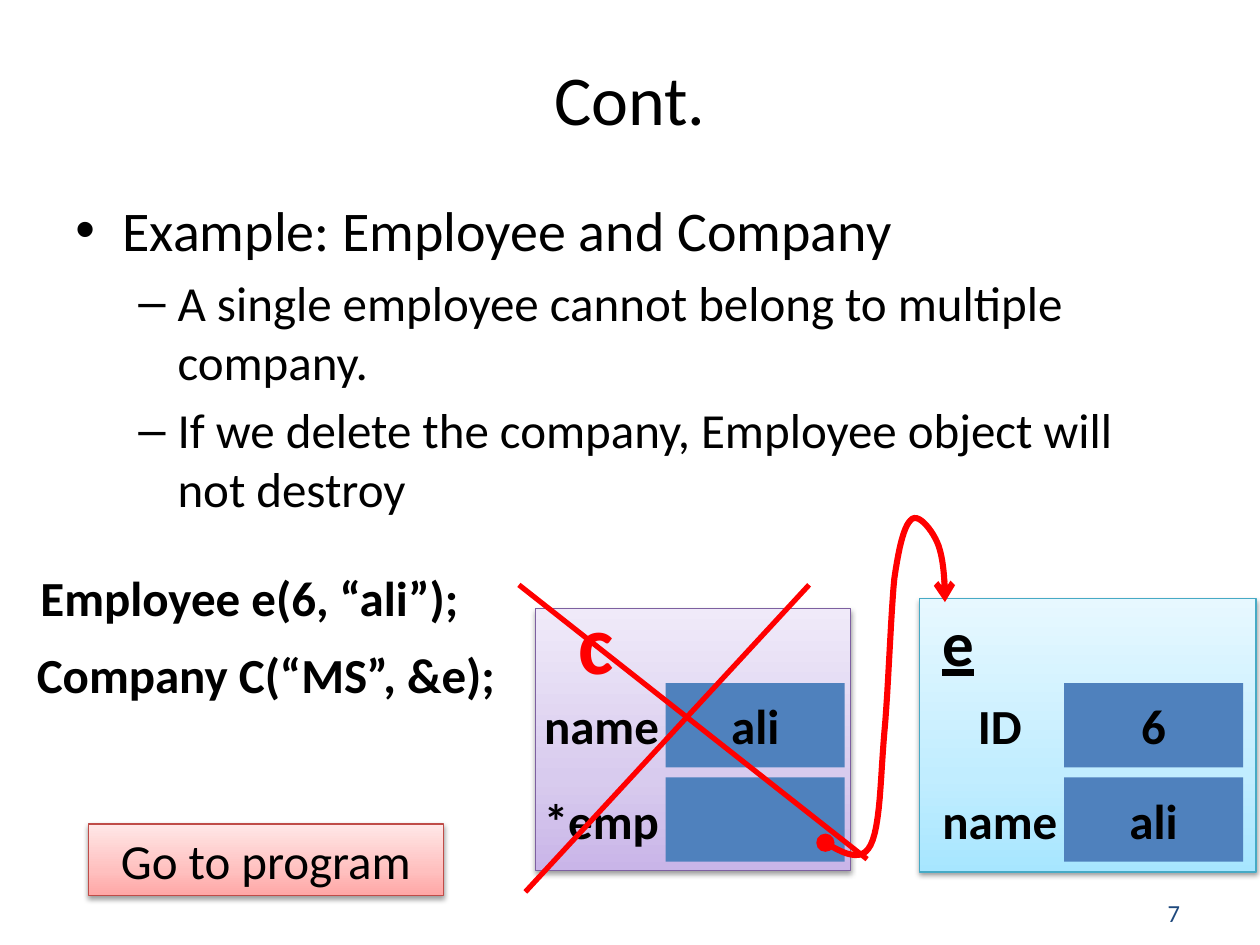
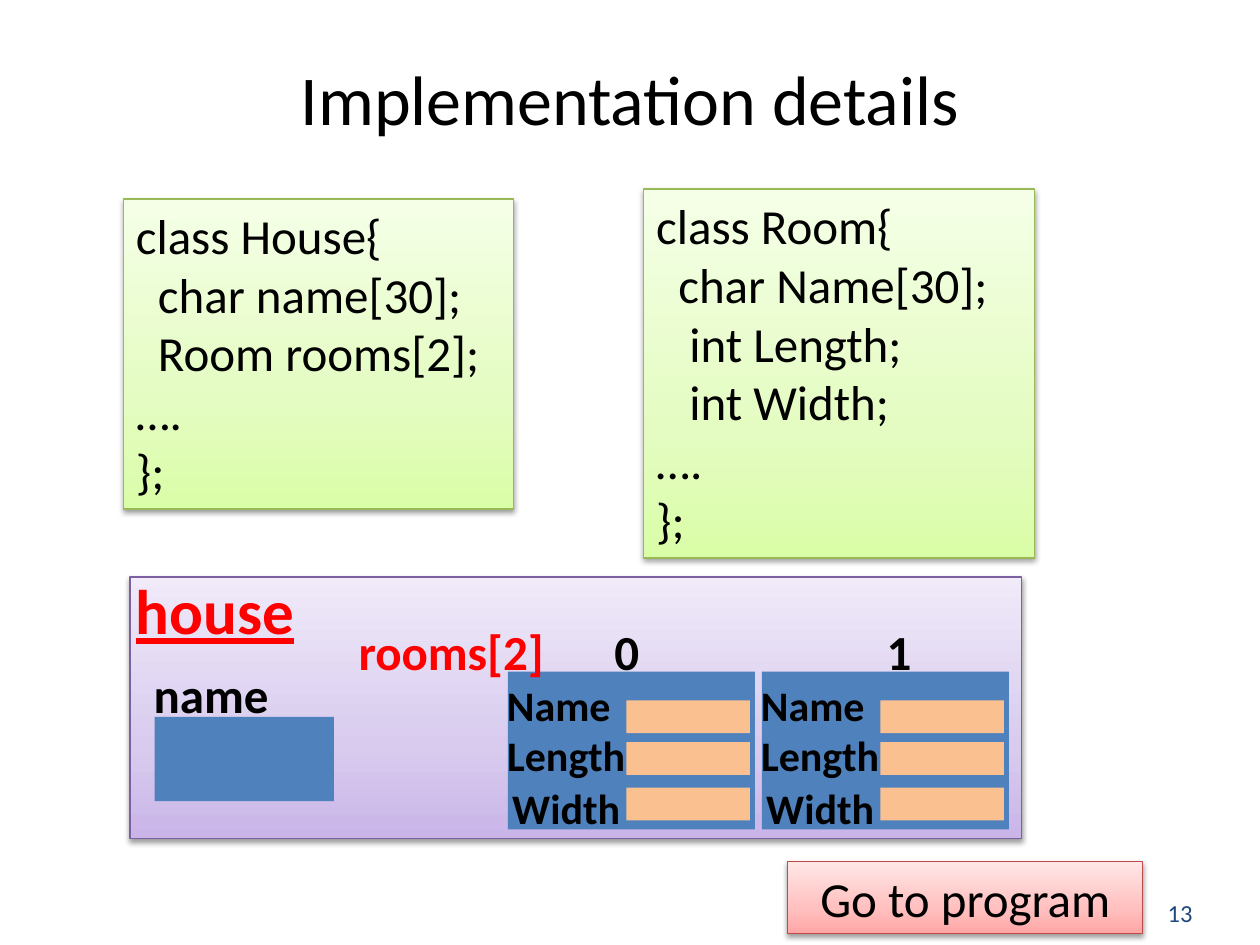
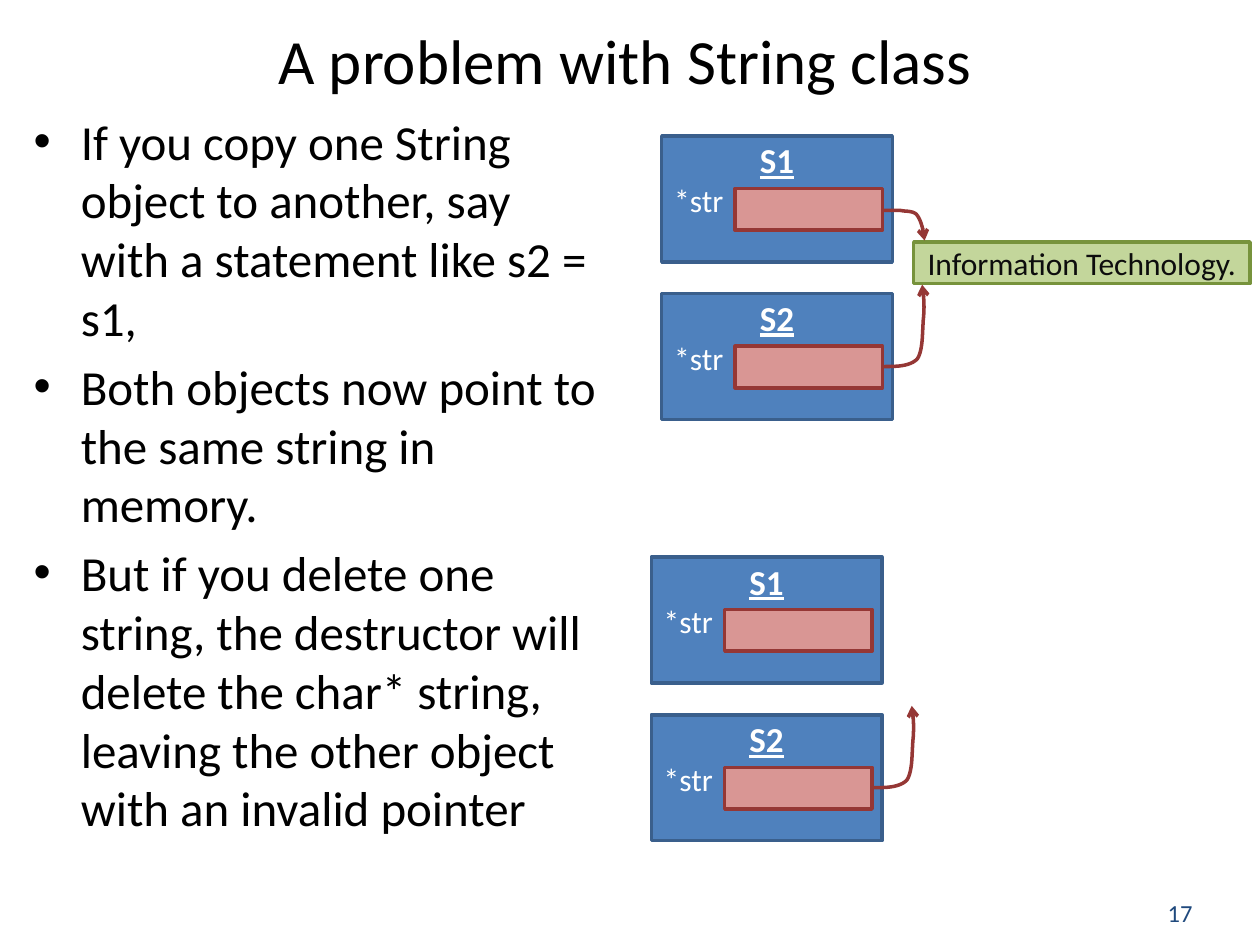
from copy import deepcopy

from lxml.etree import SubElement
from pptx import Presentation
from pptx.dml.color import RGBColor
from pptx.enum.shapes import MSO_CONNECTOR as CONNECTOR, MSO_SHAPE as SHAPE
from pptx.enum.text import MSO_ANCHOR as ANCHOR, PP_ALIGN as ALIGN
from pptx.oxml.ns import qn
from pptx.util import Cm, Pt

color = RGBColor.from_string
FONT = "Calibri"
BLUE, ORANGE, RED, DARK_RED = "4F81BD", "FAC090", "FF0000", "953735"
# Gradient colours from bottom to top, then the outline
CYAN_PANEL = dict(fill=("A7E6FF", "C1EDFF", "E7F8FF"), line="46AAC5")
PURPLE_PANEL = dict(fill=("C9B5E8", "D8CBEE", "F0EAF9"), line="7D60A0")
GREEN_PANEL = dict(fill=("DAFDA7", "E4FCC2", "F5FFE7"), line="98B955")
RED_PANEL = dict(fill=("FFA6A5", "FFC0BF", "FFE7E7"), line="BF4C48")
CODE = dict(size=28, align=ALIGN.LEFT, anchor=ANCHOR.TOP)
BODY = dict(size=28, align=ALIGN.LEFT, anchor=ANCHOR.TOP, bullet="•", indent=(0.95, 0.95))
DASH = dict(bullet="–", indent=(2.06, 0.79))
LABEL = dict(size=28, bold=True)
HEADING = dict(size=36, bold=True, underline=True)


def add_box(slide, bounds, *lines, fill=None, line=None, line_width=0.75,
            anchor=ANCHOR.MIDDLE, margin_top=0.13, margin_side=0.25, **style):
    """Add a text box, or a rectangle if filled; a line is text or (text, own format)."""
    bounds = [Cm(value) for value in bounds]
    if fill is None:
        shape = slide.shapes.add_textbox(*bounds)
    else:
        shape = slide.shapes.add_shape(SHAPE.RECTANGLE, *bounds)
        shape.shadow.inherit = False
        properties = shape._element.spPr
        if isinstance(fill, tuple):
            shape.fill.gradient()
            shape.fill.gradient_angle = 90
            stop_list = properties.find(qn("a:gradFill")).find(qn("a:gsLst"))
            stop_list.insert(1, deepcopy(stop_list[0]))
            for stop, position, shade in zip(shape.fill.gradient_stops, (0, 0.35, 1), fill):
                stop.position = position
                stop.color.rgb = color(shade)
            shadow = SubElement(properties.find(qn("a:effectLst")), qn("a:outerShdw"),
                                blurRad="40000", dist="20000", dir="5400000", rotWithShape="0")
            black = SubElement(shadow, qn("a:srgbClr"), val="000000")
            SubElement(black, qn("a:alpha"), val="38000")
        else:
            shape.fill.solid()
            shape.fill.fore_color.rgb = color(fill)
        if line:
            shape.line.color.rgb = color(line)
            shape.line.width = Pt(line_width)
        else:
            shape.line.fill.background()

    frame = shape.text_frame
    frame.word_wrap = True
    frame.vertical_anchor = anchor
    frame.margin_top = Cm(margin_top)
    frame.margin_left = frame.margin_right = Cm(margin_side)
    for number, item in enumerate(lines):
        text, own = (item, {}) if isinstance(item, str) else item
        look = {**style, **own}
        paragraph = frame.add_paragraph() if number else frame.paragraphs[0]
        paragraph.alignment = look.get("align", ALIGN.CENTER)
        if "bullet" in look:
            left, hanging = look["indent"]
            settings = paragraph._p.get_or_add_pPr()
            settings.set("marL", str(Cm(left)))
            settings.set("indent", str(-Cm(hanging)))
            SubElement(settings, qn("a:buFont"), typeface="Arial")
            SubElement(settings, qn("a:buChar"), char=look["bullet"])
            if number:
                paragraph.space_before = Pt(look["size"] * 0.2)
        run = paragraph.add_run()
        run.text = text
        run.font.name = FONT
        run.font.size = Pt(look["size"])
        run.font.bold = look.get("bold", False)
        run.font.underline = look.get("underline", False)
        run.font.color.rgb = color(look.get("ink", "000000"))


def add_curved_arrow(slide, points, ink, width, head=None, shift=(0, 0), steps=12):
    """Draw cubic curves through points: a start, then two controls and an end for each."""
    points = [(Cm(x + shift[0]), Cm(y + shift[1])) for x, y in points]
    vertices = []
    for first in range(0, len(points) - 1, 3):
        for step in range(1, steps + 1):
            t = step / steps
            weights = ((1 - t) ** 3, 3 * t * (1 - t) ** 2, 3 * t ** 2 * (1 - t), t ** 3)
            vertices.append([round(sum(weight * point[axis] for weight, point
                                       in zip(weights, points[first:first + 4])))
                             for axis in (0, 1)])
    builder = slide.shapes.build_freeform(*points[0])
    builder.add_line_segments(vertices, close=False)
    shape = builder.convert_to_shape()
    shape.shadow.inherit = False
    shape.fill.background()
    shape.line.color.rgb = color(ink)
    shape.line.width = Pt(width)
    outline = shape.line._get_or_add_ln()
    if head:
        SubElement(outline, qn("a:headEnd"), type=head)
    SubElement(outline, qn("a:tailEnd"), type="arrow")


presentation = Presentation()
presentation.slide_width, presentation.slide_height = Cm(25.4), Cm(19.05)

# Titles and slide numbers
slides = []
for title, bounds, size, slide_number in (
    ("Cont.", (1.27, 0.97, 22.86, 1.98), 40, "7"),
    ("Implementation details", (1.27, 0.97, 22.86, 1.98), 40, "13"),
    ("A problem with String class", (1.07, 0.2, 23.06, 1.98), 36, "17"),
):
    slide = presentation.slides.add_slide(presentation.slide_layouts[6])
    add_box(slide, (23.29, 17.98, 1.7, 0.84), slide_number,
            size=14, ink="1F497D", align=ALIGN.LEFT)
    add_box(slide, bounds, title, size=size)
    slides.append(slide)
company_slide, house_slide, string_slide = slides

# Employee and company
add_box(company_slide, (1.27, 3.81, 22.86, 6.99),
        ("Example: Employee and Company", dict(size=32)),
        ("A single employee cannot belong to multiple company.", DASH),
        ("If we delete the company, Employee object will not destroy", DASH), **BODY)
add_box(company_slide, (-0.2, 11.23, 10.46, 1.6), "Employee e(6, “ali”);", **LABEL)
add_box(company_slide, (0.43, 12.78, 9.86, 1.6), "Company C(“MS”, &e);", **LABEL)

for panel, look, name, name_left, name_look, label_left, members in (
    ((18.54, 12.07, 6.78, 5.51), CYAN_PANEL, "e", 17.78, HEADING, 18.62,
     (("ID", "6"), ("name", "ali"))),
    ((10.8, 12.27, 6.35, 5.28), PURPLE_PANEL, "c", 10.49,
     dict(size=48, bold=True, ink=RED), 10.59, (("name", "ali"), ("*emp", None))),
):
    add_box(company_slide, panel, **look)
    add_box(company_slide, (name_left, 12.07, 3.07, 1.7), name, **name_look)
    for row, (label, value) in enumerate(members):
        top = 13.77 + 1.9 * row
        add_box(company_slide, (label_left, top, 3.07, 1.7), label, **LABEL)
        add_box(company_slide, (label_left + 2.83, top, 3.61, 1.7),
                *([value] if value else []), fill=BLUE, **LABEL)

add_curved_arrow(company_slide, (
    (16.64, 16.99), (16.99, 17.2), (17.37, 17.4), (17.55, 17.04),
    (17.75, 16.66), (17.75, 15.65), (17.83, 14.76),
    (17.91, 13.87), (17.96, 12.37), (18.03, 11.66),
    (18.14, 10.92), (18.24, 10.57), (18.39, 10.46),
    (18.54, 10.36), (18.82, 10.72), (18.92, 11),
    (19.02, 11.28), (19.05, 11.71), (19.05, 12.14)), RED, 3.5, head="oval")
for ends in ((10.46, 11.79, 17.48, 17.32), (16.31, 11.79, 10.59, 17.98)):
    stroke = company_slide.shapes.add_connector(CONNECTOR.STRAIGHT, *map(Cm, ends))
    stroke.line.color.rgb = color(RED)
    stroke.line.width = Pt(3)
    SubElement(stroke._element.spPr, qn("a:effectLst"))

# House and rooms
add_box(house_slide, (2.62, 11.63, 17.98, 5.28), **PURPLE_PANEL)
add_box(house_slide, (2.49, 11.43, 5.92, 1.7), "house",
        ink=RED, align=ALIGN.LEFT, **HEADING)
add_box(house_slide, (2.72, 13.13, 3.07, 1.7), "name", **LABEL)
add_box(house_slide, (3.12, 14.45, 3.61, 1.7), fill=BLUE)
for index, index_left in enumerate((11.1, 16.59)):
    room_left = 10.24 + 5.12 * index
    add_box(house_slide, (room_left, 13.54, 4.98, 3.18), fill=BLUE)
    add_box(house_slide, (index_left, 12.27, 3.07, 1.7), str(index), **LABEL)
    for label, label_offset, label_top, field_top in (
        ("Name", -0.46, 13.54, 14.12),
        ("Length", -0.31, 14.55, 14.96),
        ("Width", -0.31, 15.62, 15.88),
    ):
        add_box(house_slide, (room_left + label_offset, label_top, 2.97, 1.32), label,
                size=24, bold=True)
        add_box(house_slide, (room_left + 2.39, field_top, 2.49, 0.66), fill=ORANGE)
add_box(house_slide, (6.81, 12.27, 4.57, 1.7), "rooms[2]", ink=RED, **LABEL)

add_box(house_slide, (2.49, 4.01, 7.87, 6.25), "class House{", "  char name[30];",
        "  Room rooms[2];", "….", "};", **GREEN_PANEL, **CODE)
add_box(house_slide, (12.98, 3.81, 7.87, 7.44), "class Room{", "  char Name[30];",
        "   int Length;", "   int Width;", "….", "};", **GREEN_PANEL, **CODE)

for slide, left, top in ((company_slide, 1.78, 16.61), (house_slide, 15.88, 17.37)):
    add_box(slide, (left, top, 7.16, 1.45), "Go to program", size=28, **RED_PANEL)

# Strings before and after the deletion
add_box(string_slide, (0.43, 2.11, 12.07, 15.88),
        "If you copy one String object to another, say with a statement like s2 = s1,",
        "Both objects now point to the same string in memory.",
        "But if you delete one string, the destructor will delete the char* string, "
        "leaving the other object with an invalid pointer", **BODY)
add_box(string_slide, (18.42, 4.88, 6.78, 0.84), "Information Technology.",
        fill="C3D69B", line="77933C", line_width=2, size=18, ink="0D0D0D", margin_side=0.1)
for shift in ((0, 0), (-0.21, 8.49)):
    for row, name in enumerate(("S1", "S2")):
        left, top = 13.34 + shift[0], 2.74 + shift[1] + 3.18 * row
        add_box(string_slide, (left, top, 4.65, 2.54),
                (name, dict(size=20, bold=True, underline=True)),
                ("*str", dict(size=18, align=ALIGN.LEFT)),
                fill=BLUE, line="3A5F8C", line_width=2, ink="FFFFFF",
                anchor=ANCHOR.TOP, margin_top=0.06)
        add_box(string_slide, (left + 1.48, top + 1.06, 2.97, 0.84),
                fill="D99694", line=DARK_RED, line_width=2)
    add_curved_arrow(string_slide, (
        (17.81, 7.39), (18.06, 7.39), (18.34, 7.39), (18.49, 7.24),
        (18.62, 7.06), (18.59, 6.63), (18.62, 6.38),
        (18.64, 6.12), (18.62, 5.94), (18.59, 5.74)), DARK_RED, 2, shift=shift)
add_curved_arrow(string_slide, (
    (17.78, 4.24), (17.88, 4.24), (18.01, 4.24), (18.14, 4.24),
    (18.24, 4.27), (18.42, 4.24), (18.49, 4.34),
    (18.57, 4.45), (18.62, 4.65), (18.64, 4.85)), DARK_RED, 2)

presentation.save("out.pptx")
